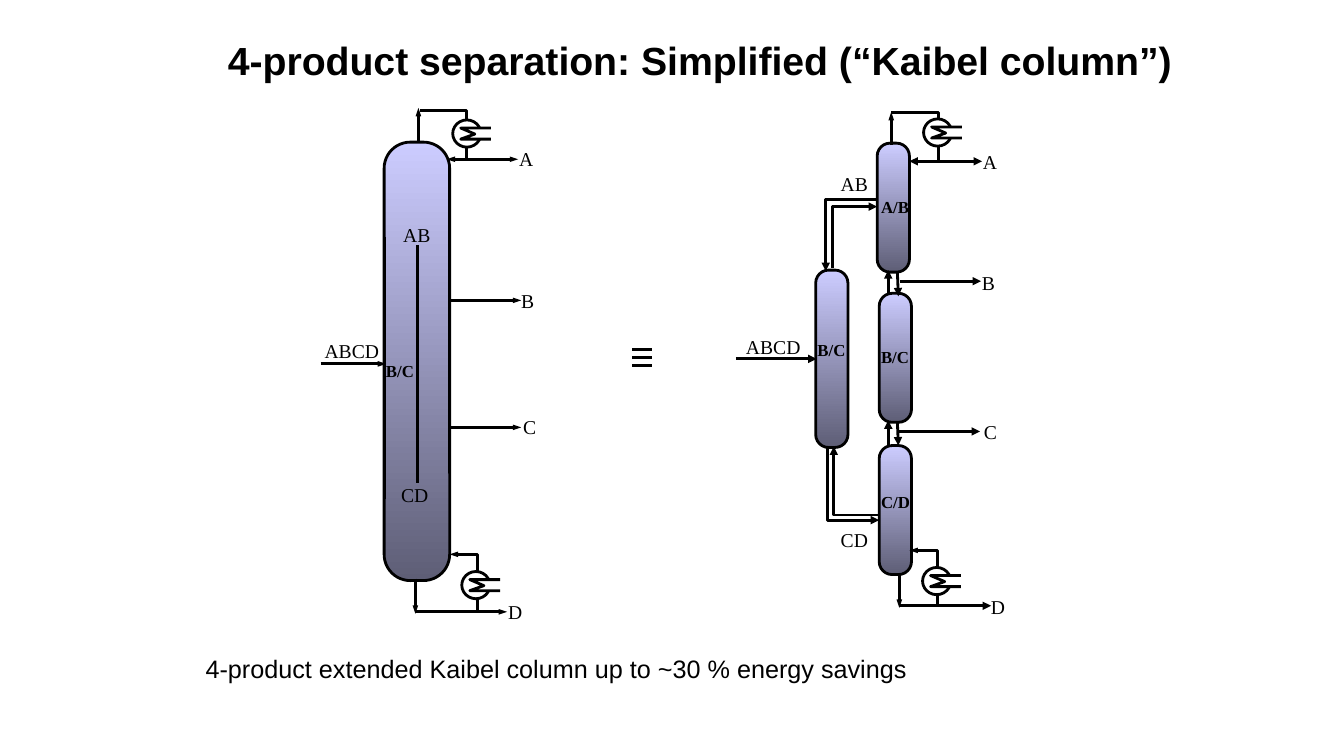
from lxml.etree import SubElement
from pptx import Presentation
from pptx.dml.color import RGBColor
from pptx.enum.shapes import MSO_CONNECTOR, MSO_SHAPE
from pptx.enum.text import MSO_ANCHOR
from pptx.oxml.ns import qn
from pptx.util import Cm, Pt

# Positions below are in inches; length() turns them into Cm.
BLACK, WHITE = "000000", "FFFFFF"
COLUMN_TOP, COLUMN_BOTTOM = "CCCCFF", "5E5E76"
SERIF, SANS = "Times New Roman", "Arial"

TITLE = "4-product separation: Simplified (“Kaibel column”)"
CAPTION = "4-product extended Kaibel column up to ~30 % energy savings"

# left, top, width, height
COLUMNS = [
    (3.81, 1.41, 0.65, 4.35),
    (8.09, 2.68, 0.32, 1.76),
    (8.70, 1.42, 0.32, 1.28),
    (8.72, 2.91, 0.32, 1.28),
    (8.72, 4.42, 0.32, 1.28),
]

# start, end, arrow ends, arrow width
STREAMS = [
    ((4.15, 1.41), (4.15, 1.07), "tail", "sm"),
    ((4.43, 1.58), (5.14, 1.58), "both", "sm"),
    ((4.45, 2.98), (5.17, 2.98), "tail", "sm"),
    ((4.45, 4.24), (5.17, 4.24), "tail", "sm"),
    ((4.12, 5.74), (4.12, 6.09), "tail", "sm"),
    ((4.12, 6.07), (5.03, 6.07), "tail", "sm"),
    ((3.18, 3.61), (3.83, 3.61), "tail", "sm"),
    ((8.84, 1.44), (8.84, 1.11), "tail", "sm"),
    ((9.02, 1.60), (9.74, 1.60), "both", "med"),
    ((8.93, 2.79), (9.73, 2.79), "tail", "med"),
    ((8.91, 4.28), (9.72, 4.28), "tail", "med"),
    ((8.92, 5.70), (8.92, 6.03), "tail", "sm"),
    ((8.92, 6.01), (9.83, 6.01), "tail", "med"),
    ((7.30, 3.56), (8.10, 3.56), "tail", "med"),
    ((8.81, 2.68), (8.81, 2.92), "head", "med"),
    ((8.90, 2.69), (8.91, 2.94), "tail", "med"),
    ((8.81, 4.17), (8.81, 4.41), "head", "med"),
    ((8.90, 4.18), (8.91, 4.42), "tail", "med"),
]
WALLS = [((3.81, 2.35), (3.81, 4.95)), ((4.14, 2.43), (4.14, 4.79))]
EQUIVALENCE = {"left": 6.27, "right": 6.47, "top": 3.47, "gap": 0.08, "bars": 3}

# side of the main column, end at the prefractionator, arrow end
TRANSFERS = [
    ((8.70, 2.05), (8.26, 2.66), "head"),
    ((8.69, 1.98), (8.19, 2.69), "tail"),
    ((8.72, 5.16), (8.21, 4.44), "head"),
    ((8.72, 5.11), (8.27, 4.43), "tail"),
]

# pipe points, arrow end, exchanger left and top
EXCHANGERS = [
    ([(4.17, 1.10), (4.63, 1.10), (4.63, 1.58)], "none", (4.49, 1.19)),
    ([(4.74, 6.06), (4.74, 5.50), (4.46, 5.50)], "tail", (4.58, 5.67)),
    ([(8.84, 1.12), (9.31, 1.12), (9.31, 1.59)], "none", (9.16, 1.18)),
    ([(9.30, 6.01), (9.30, 5.46), (9.02, 5.46)], "tail", (9.15, 5.63)),
]
ZIGZAG = [(0.38, 0.19), (0.08, 0.19), (0.22, 0.14), (0.08, 0.08), (0.38, 0.08)]

# text, left, top, width
STREAM_LABELS = [
    ("ABCD", 3.12, 3.31, 0.79), ("AB", 3.90, 2.16, 0.53), ("CD", 3.88, 4.74, 0.61),
    ("A", 5.05, 1.41, 0.32), ("B", 5.07, 2.82, 0.32),
    ("C", 5.09, 4.07, 0.32), ("D", 4.94, 5.90, 0.32),
    ("ABCD", 7.30, 3.27, 0.79), ("AB", 8.24, 1.66, 0.53), ("CD", 8.24, 5.19, 0.61),
    ("A", 9.65, 1.44, 0.32), ("B", 9.64, 2.64, 0.32),
    ("C", 9.66, 4.12, 0.32), ("D", 9.73, 5.85, 0.32),
]
SPLIT_LABELS = [
    ("B/C", 3.73, 3.53), ("A/B", 8.64, 1.90), ("B/C", 8.64, 3.39),
    ("B/C", 8.01, 3.32), ("C/D", 8.64, 4.83),
]


def length(inches):
    return Cm(inches * 2.54)


def lengths(values):
    return [length(value) for value in values]


def rgb(color):
    return RGBColor.from_string(color)


def outline(part, arrows="none", arrow_width="med"):
    """Black 2 pt line with triangles at the head, the tail or both."""
    part.line.color.rgb = rgb(BLACK)
    part.line.width = Pt(2)
    for end in ("head", "tail"):
        if arrows in (end, "both"):
            SubElement(part.line._get_or_add_ln(), qn(f"a:{end}End"),
                       type="triangle", w=arrow_width, len="med")


def add_line(start, end, arrows="none", arrow_width="med", bent=False):
    kind = MSO_CONNECTOR.ELBOW if bent else MSO_CONNECTOR.STRAIGHT
    line = slide.shapes.add_connector(kind, *lengths(start + end))
    outline(line, arrows, arrow_width)
    properties = line._element.spPr
    SubElement(properties, qn("a:effectLst"))
    if bent:
        properties.find(qn("a:prstGeom")).set("prst", "bentConnector2")


def add_path(points, arrows="none", fill=None):
    start, *rest = [tuple(lengths(point)) for point in points]
    builder = slide.shapes.build_freeform(*start, scale=1.0)
    builder.add_line_segments(rest, close=False)
    path = builder.convert_to_shape()
    path.shadow.inherit = False
    if fill:
        path.fill.solid()
        path.fill.fore_color.rgb = rgb(fill)
    else:
        path.fill.background()
    outline(path, arrows, "sm")


def add_column(box):
    column = slide.shapes.add_shape(MSO_SHAPE.ROUNDED_RECTANGLE, *lengths(box))
    column.adjustments[0] = 0.4
    column.shadow.inherit = False
    column.fill.gradient()
    column.fill.gradient_angle = 270
    for stop, color in zip(column.fill.gradient_stops, (COLUMN_TOP, COLUMN_BOTTOM)):
        stop.color.rgb = rgb(color)
    outline(column)


def add_exchanger(left, top):
    circle = slide.shapes.add_shape(MSO_SHAPE.OVAL, *lengths((left, top, 0.28, 0.27)))
    circle.shadow.inherit = False
    circle.fill.solid()
    circle.fill.fore_color.rgb = rgb(WHITE)
    outline(circle)
    add_path([(left + x, top + y) for x, y in ZIGZAG], fill=WHITE)


def add_text(text, box, size, font=SERIF, bold=False):
    frame = slide.shapes.add_textbox(*lengths(box)).text_frame
    frame.word_wrap = True
    run = frame.paragraphs[0].add_run()
    run.text = text
    run.font.size = Pt(size)
    run.font.name = font
    run.font.bold = bold
    run.font.color.rgb = rgb(BLACK)
    return frame


deck = Presentation()
deck.slide_width, deck.slide_height = lengths((13.33, 7.5))
slide = deck.slides.add_slide(deck.slide_layouts[6])

title = add_text(TITLE, (2.26, 0.36, 9.6, 0.47), 28, SANS, bold=True)
title.vertical_anchor = MSO_ANCHOR.MIDDLE
title.margin_left = title.margin_right = title.margin_top = title.margin_bottom = 0

for column_box in COLUMNS:
    add_column(column_box)
for stream in STREAMS:
    add_line(*stream)
for wall in WALLS:
    add_line(*wall)
for bar in range(EQUIVALENCE["bars"]):
    bar_y = EQUIVALENCE["top"] + bar * EQUIVALENCE["gap"]
    add_line((EQUIVALENCE["left"], bar_y), (EQUIVALENCE["right"], bar_y))
for column_side, prefractionator_end, arrow_end in TRANSFERS:
    add_line(column_side, prefractionator_end, arrow_end, bent=True)
for pipe, arrow_end, corner in EXCHANGERS:
    add_path(pipe, arrow_end)
    add_exchanger(*corner)

for text, left, top, width in STREAM_LABELS:
    add_text(text, (left, top, width, 0.33), 14)
for text, left, top in SPLIT_LABELS:
    add_text(text, (left, top, 0.53, 0.3), 12, bold=True)
add_text(CAPTION, (1.94, 6.43, 7.17, 0.4), 18, SANS)

deck.save("out.pptx")
